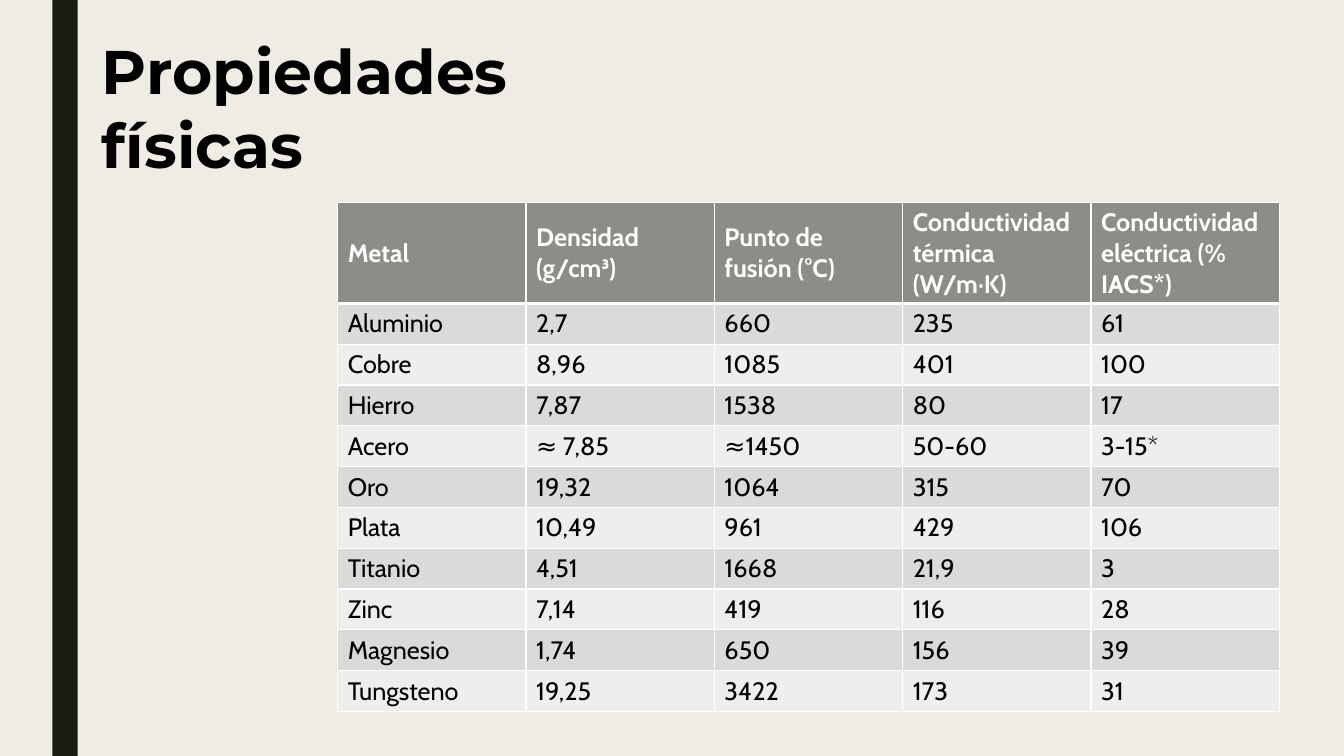
from dataclasses import dataclass

from lxml import etree
from pptx import Presentation
from pptx.dml.color import RGBColor
from pptx.enum.shapes import MSO_SHAPE
from pptx.enum.text import MSO_ANCHOR, MSO_AUTO_SIZE, PP_ALIGN
from pptx.oxml.ns import qn
from pptx.util import Inches, Pt

RECTANGLE = MSO_SHAPE.RECTANGLE
TOP, MIDDLE = MSO_ANCHOR.TOP, MSO_ANCHOR.MIDDLE
LEFT = PP_ALIGN.LEFT
GROW = MSO_AUTO_SIZE.SHAPE_TO_FIT_TEXT
TITLE_ONLY = 5

CREAM = RGBColor(0xEF, 0xED, 0xE3)
DARK_OLIVE = RGBColor(0x19, 0x1B, 0x0E)
HEADER_GREY = RGBColor(0x8C, 0x8D, 0x86)
BAND_DARK = RGBColor(0xDA, 0xDB, 0xD9)
BAND_LIGHT = RGBColor(0xEE, 0xEE, 0xED)
BLACK = RGBColor(0, 0, 0)
WHITE = RGBColor(0xFF, 0xFF, 0xFF)

TABLE_WIDTH, TABLE_HEIGHT = Inches(9.34), Inches(5.05)
HEADER_HEIGHT = Inches(1)
THIN, THICK = Pt(1), Pt(3)

ROWS = (
    ("Metal", "Densidad (g/cm³)", "Punto de fusión (°C)",
     "Conductividad térmica (W/m·K)", "Conductividad eléctrica (% IACS*)"),
    ("Aluminio", "2,7", "660", "235", "61"),
    ("Cobre", "8,96", "1085", "401", "100"),
    ("Hierro", "7,87", "1538", "80", "17"),
    ("Acero", "≈ 7,85", "≈1450", "50-60", "3-15*"),
    ("Oro", "19,32", "1064", "315", "70"),
    ("Plata", "10,49", "961", "429", "106"),
    ("Titanio", "4,51", "1668", "21,9", "3"),
    ("Zinc", "7,14", "419", "116", "28"),
    ("Magnesio", "1,74", "650", "156", "39"),
    ("Tungsteno", "19,25", "3422", "173", "31"),
)


@dataclass(frozen=True)
class RowStyle:
    fill: RGBColor
    color: RGBColor = BLACK
    bold: bool = False
    anchor: MSO_ANCHOR = TOP
    top: int = THIN
    bottom: int = THIN


def row_style(index: int) -> RowStyle:
    if index == 0:
        return RowStyle(HEADER_GREY, WHITE, True, MIDDLE, bottom=THICK)
    return RowStyle(BAND_DARK if index % 2 else BAND_LIGHT,
                    top=THICK if index == 1 else THIN)


def write_text(frame, text: str, color: RGBColor, **font_values) -> None:
    para = frame.paragraphs[0]
    para.alignment = LEFT
    span = para.add_run()
    span.text = text
    for name, value in font_values.items():
        setattr(span.font, name, value)
    span.font.color.rgb = color


def add_borders(cell, style: RowStyle) -> None:
    properties = cell._tc.get_or_add_tcPr()
    widths = {"a:lnL": THIN, "a:lnR": THIN,
              "a:lnT": style.top, "a:lnB": style.bottom}
    for tag, width in widths.items():
        line = etree.SubElement(properties, qn(tag), w=str(int(width)))
        fill = etree.SubElement(line, qn("a:solidFill"))
        etree.SubElement(fill, qn("a:srgbClr"), val=str(WHITE))


def add_side_bar(page) -> None:
    bar = page.shapes.add_shape(RECTANGLE, Inches(0.52), 0,
                                Inches(0.25), Inches(7.5))
    bar.shadow.inherit = False
    bar.fill.solid()
    bar.fill.fore_color.rgb = DARK_OLIVE
    bar.line.fill.background()


def set_title(page, text: str) -> None:
    title = page.shapes.title
    title.left, title.top = Inches(0.91), Inches(0.28)
    title.width, title.height = Inches(4.86), Inches(1.58)
    frame = title.text_frame
    frame_format = {"word_wrap": True, "auto_size": GROW,
                    "vertical_anchor": TOP}
    for name, value in frame_format.items():
        setattr(frame, name, value)
    write_text(frame, text, BLACK, name="Montserrat", size=Pt(44), bold=True)


def add_metal_table(page) -> None:
    table = page.shapes.add_table(
        len(ROWS), len(ROWS[0]), Inches(3.35), Inches(2.01),
        TABLE_WIDTH, TABLE_HEIGHT).table
    body_height = (TABLE_HEIGHT - HEADER_HEIGHT) // (len(ROWS) - 1)
    for index, values in enumerate(ROWS):
        table.rows[index].height = body_height if index else HEADER_HEIGHT
        style = row_style(index)
        for column, value in enumerate(values):
            cell = table.cell(index, column)
            add_borders(cell, style)
            cell.fill.solid()
            cell.fill.fore_color.rgb = style.fill
            cell.vertical_anchor = style.anchor
            write_text(cell.text_frame, value, style.color,
                       name="Cabin", size=Pt(18), bold=style.bold)


def main() -> None:
    deck = Presentation()
    deck.slide_width, deck.slide_height = Inches(13.33), Inches(7.5)
    page = deck.slides.add_slide(deck.slide_layouts[TITLE_ONLY])
    page.background.fill.solid()
    page.background.fill.fore_color.rgb = CREAM
    add_side_bar(page)
    set_title(page, "Propiedades físicas")
    add_metal_table(page)
    deck.save("out.pptx")


if __name__ == "__main__":
    main()
